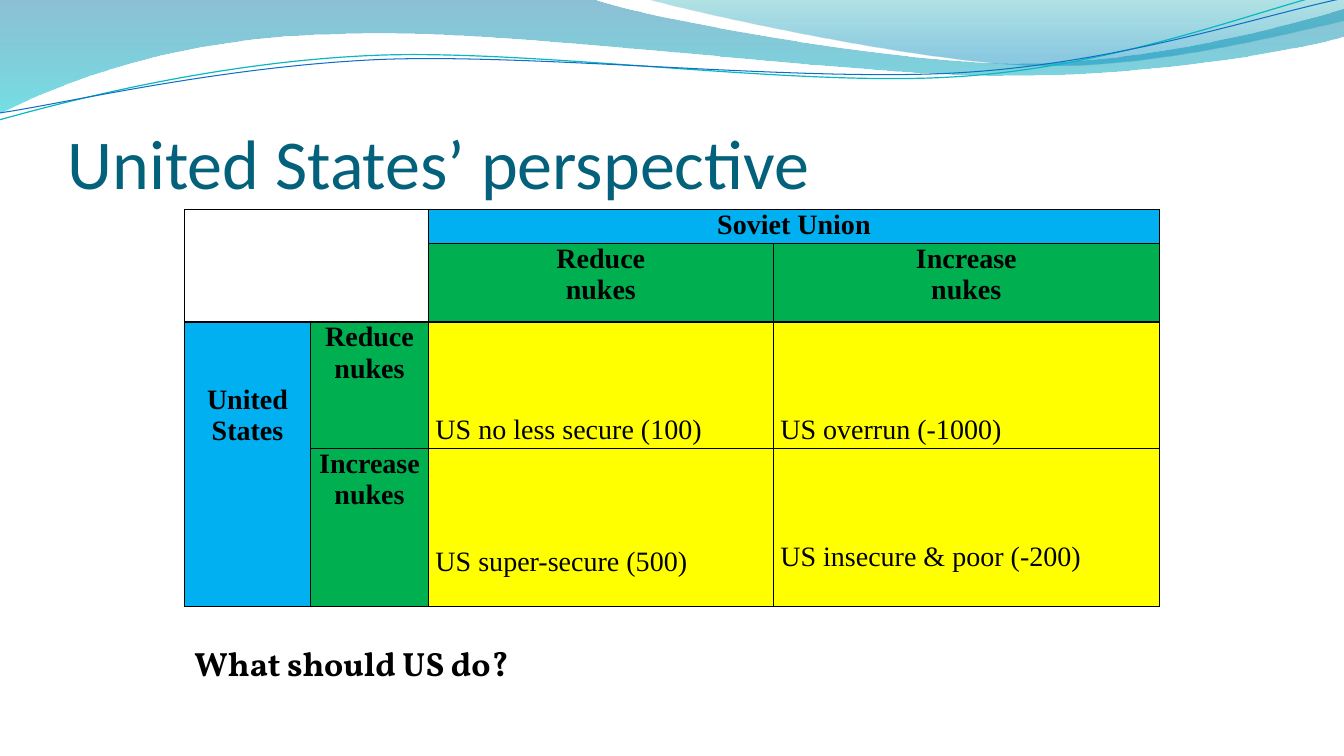
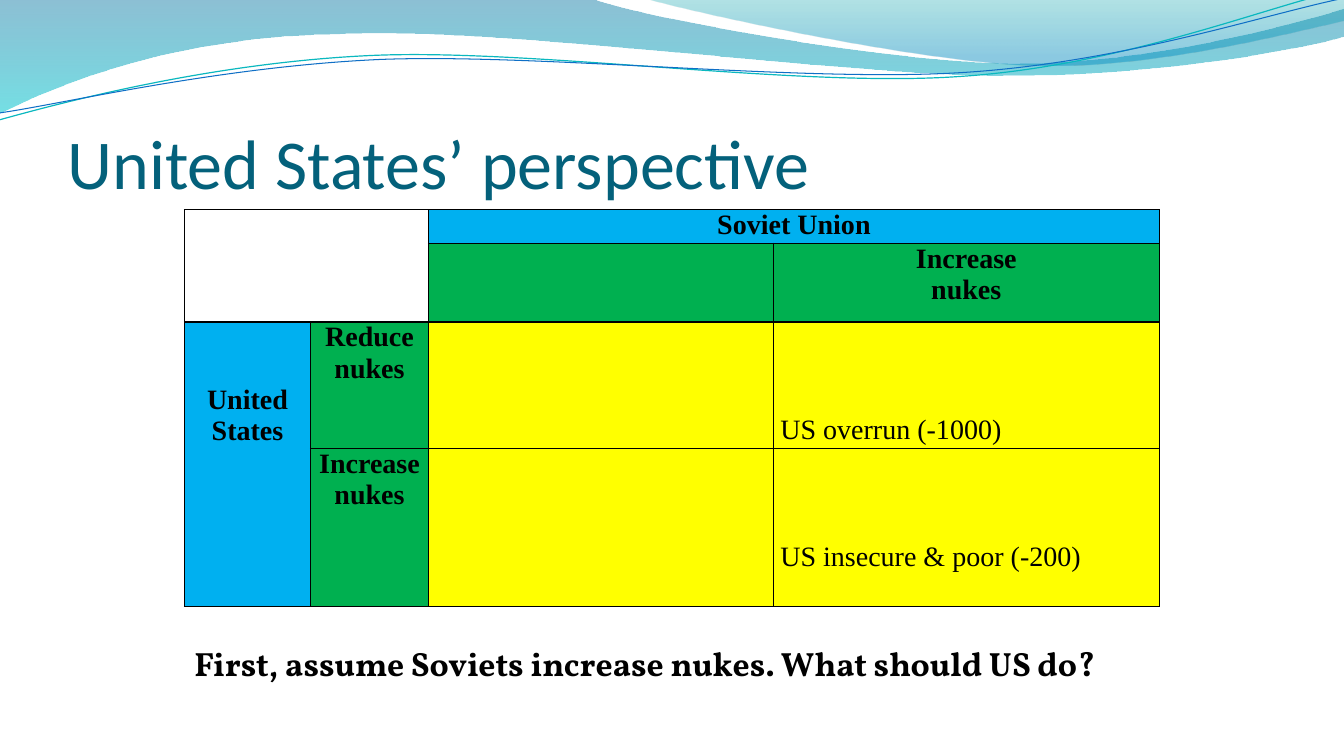
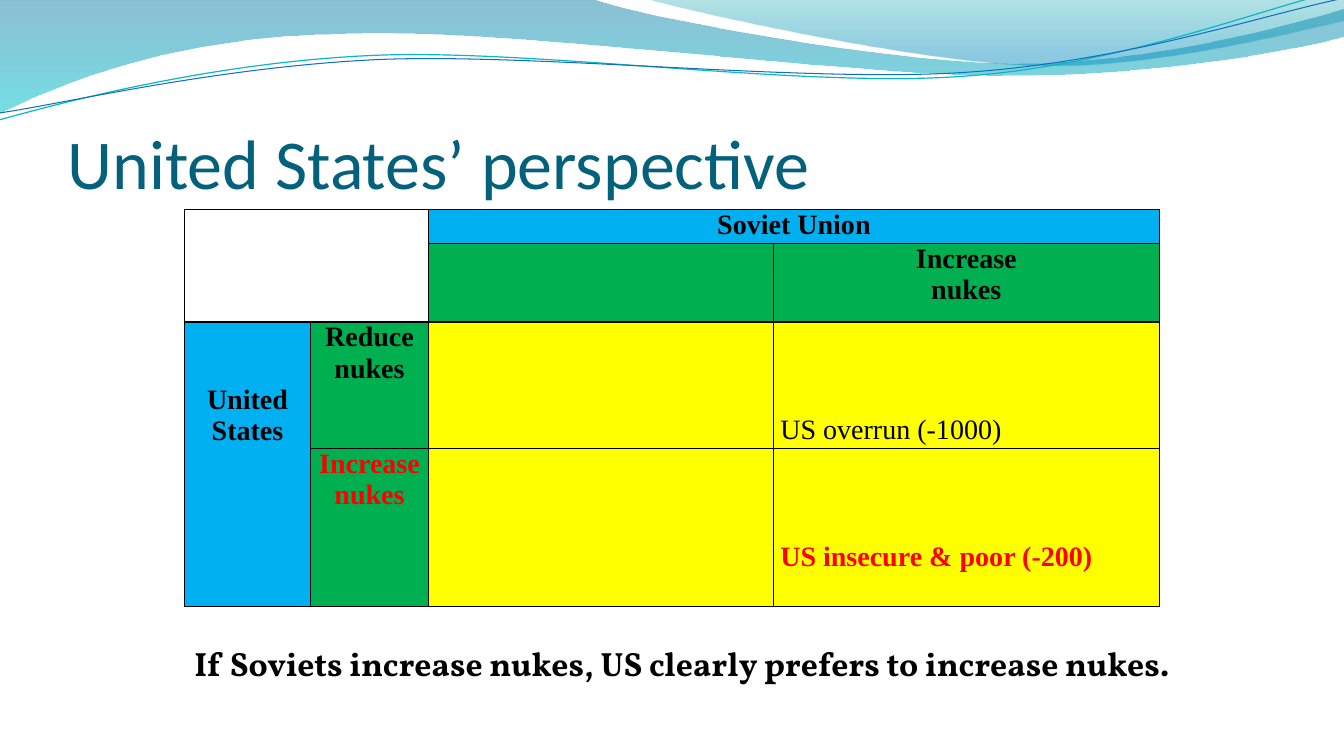
from dataclasses import dataclass

from lxml.etree import SubElement
from pptx import Presentation
from pptx.dml.color import RGBColor
from pptx.enum.text import MSO_ANCHOR, MSO_AUTO_SIZE, PP_ALIGN
from pptx.oxml import parse_xml
from pptx.oxml.ns import nsdecls, qn
from pptx.util import Inches, Pt


@dataclass(frozen=True)
class Theme:
    title_font: str = "Calibri"
    table_font: str = "Times New Roman"
    question_font: str = "Vollkorn"
    title_size: int = 50
    table_size: int = 20
    question_size: int = 24
    title: str = "04617B"
    ink: str = "000000"
    highlight: str = "FF0000"
    player: str = "00B0F0"
    choice: str = "00B050"
    payoff: str = "FFFF00"
    border_width: int = 1


@dataclass(frozen=True)
class Box:
    left: float
    top: float
    width: float
    height: float

    def inches(self):
        return [Inches(v) for v in (self.left, self.top, self.width, self.height)]


THEME = Theme()
SLIDE = Box(0, 0, 13.33, 7.5)
TITLE = Box(0.67, 0.77, 12, 1.25)
MATRIX = Box(1.83, 2.08, 9.67, 3.92)

COLUMN_WIDTHS = (1.25, 1.17, 3.42, 3.83)
ROW_HEIGHTS = (0.32, 0.78, 1.24, 1.57)

BANDS = (
    ([[(0, 0)], [(5.87, -0.01)],
      [(6.34, 0.17), (8.85, 0.63), (10.11, 0.63)],
      [(11.38, 0.63), (12.78, 0.26), (13.33, 0.09)],
      [(13.35, 0.36)],
      [(13.11, 0.44), (11.6, 0.76), (9.94, 0.75)],
      [(8.29, 0.75), (5.09, 0.28), (3.43, 0.34)],
      [(1.72, 0.36), (0.61, 0.83), (-0.01, 1.13)],
      [(0, 0)]],
     ((0, "0074A1", 45), (1, "00C6CF", 55))),
    ([[(6.39, -0.01)],
      [(6.79, 0.11), (9.09, 0.62), (10.25, 0.65)],
      [(11.41, 0.69), (12.82, 0.32), (13.33, 0.21)],
      [(13.33, 0)], [(6.39, -0.01)]],
     ((0, "00A1A9", 30), (0.8, "008BBF", 45))),
)
STRANDS = (
    ([[(-0.01, 1.19)],
      [(0.64, 1.01), (2.11, 0.62), (3.69, 0.55)],
      [(5.27, 0.48), (7.9, 0.87), (9.5, 0.76)],
      [(11.1, 0.66), (12.52, 0.08), (13.31, -0.1)]], "0AB8BF", 0.85),
    ([[(0, 1.12)],
      [(0.63, 1.03), (2.18, 0.66), (3.78, 0.59)],
      [(5.37, 0.53), (7.96, 0.82), (9.55, 0.72)],
      [(11.15, 0.62), (12.55, 0.14), (13.34, -0.02)]], "0F6FC6", 0.75),
)


def rgb(value):
    return RGBColor.from_string(value)


def bend_segments(outline_shape, segments):
    corners = iter(list(outline_shape.element.iter(qn("a:lnTo"))))
    for segment in segments:
        first, *others = [next(corners) for _ in segment]
        if others:
            first.tag_name = None
            curve = parse_xml(f'<a:cubicBezTo {nsdecls("a")}/>')
            first.addprevious(curve)
            for corner in (first, *others):
                curve.append(corner[0])
                corner.getparent().remove(corner)


def add_outline(slide, box, segments, closed):
    start, *rest = [(Inches(box.left + x), Inches(box.top + y))
                    for segment in segments for x, y in segment]
    builder = slide.shapes.build_freeform(*start)
    builder.add_line_segments(rest, close=closed)
    outline_shape = builder.convert_to_shape()
    bend_segments(outline_shape, segments[1:])
    outline_shape.shadow.inherit = False
    return outline_shape


def add_waves(slide, box):
    for segments, stops in BANDS:
        band = add_outline(slide, box, segments, True)
        band.line.fill.background()
        band.fill.gradient()
        band.fill.gradient_angle = 270
        for stop, (position, color, _) in zip(band.fill.gradient_stops, stops):
            stop.position = position
            stop.color.rgb = rgb(color)
        for tint, (_, _, opacity) in zip(band.element.iter(qn("a:srgbClr")), stops):
            SubElement(tint, qn("a:alpha")).set("val", str(opacity * 1000))
    for segments, color, width in STRANDS:
        strand = add_outline(slide, box, segments, False)
        strand.fill.background()
        strand.line.color.rgb = rgb(color)
        strand.line.width = Pt(width)


def style(paragraph, font, size, color, bold=False):
    paragraph.font.name = font
    paragraph.font.size = Pt(size)
    paragraph.font.bold = bold
    paragraph.font.color.rgb = rgb(color)


def add_title(slide, box, text):
    frame = slide.shapes.add_textbox(*box.inches()).text_frame
    frame.word_wrap = True
    frame.vertical_anchor = MSO_ANCHOR.BOTTOM
    frame.margin_left = frame.margin_right = frame.margin_bottom = 0
    frame.margin_top = Inches(0.05)
    frame.text = text
    style(frame.paragraphs[0], THEME.title_font, THEME.title_size, THEME.title)


def add_question(slide, box, text):
    frame = slide.shapes.add_textbox(*box.inches()).text_frame
    frame.word_wrap = False
    frame.auto_size = MSO_AUTO_SIZE.SHAPE_TO_FIT_TEXT
    frame.text = text
    style(frame.paragraphs[0], THEME.question_font, THEME.question_size, THEME.ink, True)


def add_borders(cell):
    properties = cell._tc.get_or_add_tcPr()
    for index, side in enumerate(("lnL", "lnR", "lnT", "lnB")):
        properties.insert(index, parse_xml(
            f'<a:{side} {nsdecls("a")} w="{Pt(THEME.border_width)}">'
            f'<a:solidFill><a:srgbClr val="{THEME.ink}"/></a:solidFill></a:{side}>'))


def fill_cell(cell, text, fill, drop=0, color=THEME.ink, bold=True):
    is_payoff = fill == THEME.payoff
    cell.margin_left = cell.margin_right = Inches(0.07 if is_payoff else 0.03)
    cell.margin_top = Inches(drop)
    cell.fill.solid()
    cell.fill.fore_color.rgb = rgb(fill)
    cell.text = text
    for paragraph in cell.text_frame.paragraphs:
        style(paragraph, THEME.table_font, THEME.table_size, color, bold)
        paragraph.alignment = PP_ALIGN.LEFT if is_payoff else PP_ALIGN.CENTER


def add_matrix(slide, box, reduce_shown, increase_chosen):
    table = slide.shapes.add_table(4, 4, *box.inches()).table
    table.first_row = table.horz_banding = False
    for column, width in zip(table.columns, COLUMN_WIDTHS):
        column.width = Inches(width)
    for row, height in zip(table.rows, ROW_HEIGHTS):
        row.height = Inches(height)
    for cell in table.iter_cells():
        cell.margin_top = cell.margin_bottom = 0
        cell.fill.background()
        add_borders(cell)
    for first, last in (((0, 0), (1, 1)), ((0, 2), (0, 3)), ((2, 0), (3, 0))):
        table.cell(*first).merge(table.cell(*last))

    chosen = THEME.highlight if increase_chosen else THEME.ink
    fill_cell(table.cell(0, 2), "Soviet Union", THEME.player)
    fill_cell(table.cell(2, 0), "United States", THEME.player, drop=0.62)
    fill_cell(table.cell(1, 2), "Reduce\nnukes" if reduce_shown else "", THEME.choice)
    fill_cell(table.cell(1, 3), "Increase\nnukes", THEME.choice)
    fill_cell(table.cell(2, 1), "Reduce nukes", THEME.choice)
    fill_cell(table.cell(3, 1), "Increase nukes", THEME.choice, color=chosen)

    secure, super_secure = (
        ("US no less secure (100)", "US super-secure (500)") if reduce_shown else ("", ""))
    fill_cell(table.cell(2, 2), secure, THEME.payoff, drop=0.92, bold=False)
    fill_cell(table.cell(3, 2), super_secure, THEME.payoff, drop=0.97, bold=False)
    fill_cell(table.cell(2, 3), "US overrun (-1000)", THEME.payoff, drop=0.92, bold=False)
    fill_cell(table.cell(3, 3), "US insecure & poor (-200)", THEME.payoff,
              drop=0.92, color=chosen, bold=increase_chosen)


def add_perspective_slide(deck, question, question_width,
                          reduce_shown=False, increase_chosen=False):
    slide = deck.slides.add_slide(deck.slide_layouts[6])
    add_waves(slide, SLIDE)
    add_title(slide, TITLE, "United States’ perspective")
    add_matrix(slide, MATRIX, reduce_shown, increase_chosen)
    add_question(slide, Box(MATRIX.left, 6.33, question_width, 0.5), question)


def main():
    deck = Presentation()
    deck.slide_width = Inches(SLIDE.width)
    deck.slide_height = Inches(SLIDE.height)
    add_perspective_slide(deck, "What should US do?", 3.37, reduce_shown=True)
    add_perspective_slide(
        deck, "First, assume Soviets increase nukes. What should US do?", 9.19)
    add_perspective_slide(
        deck, "If Soviets increase nukes, US clearly prefers to increase nukes.", 9.88,
        increase_chosen=True)
    deck.save("out.pptx")


if __name__ == "__main__":
    main()
